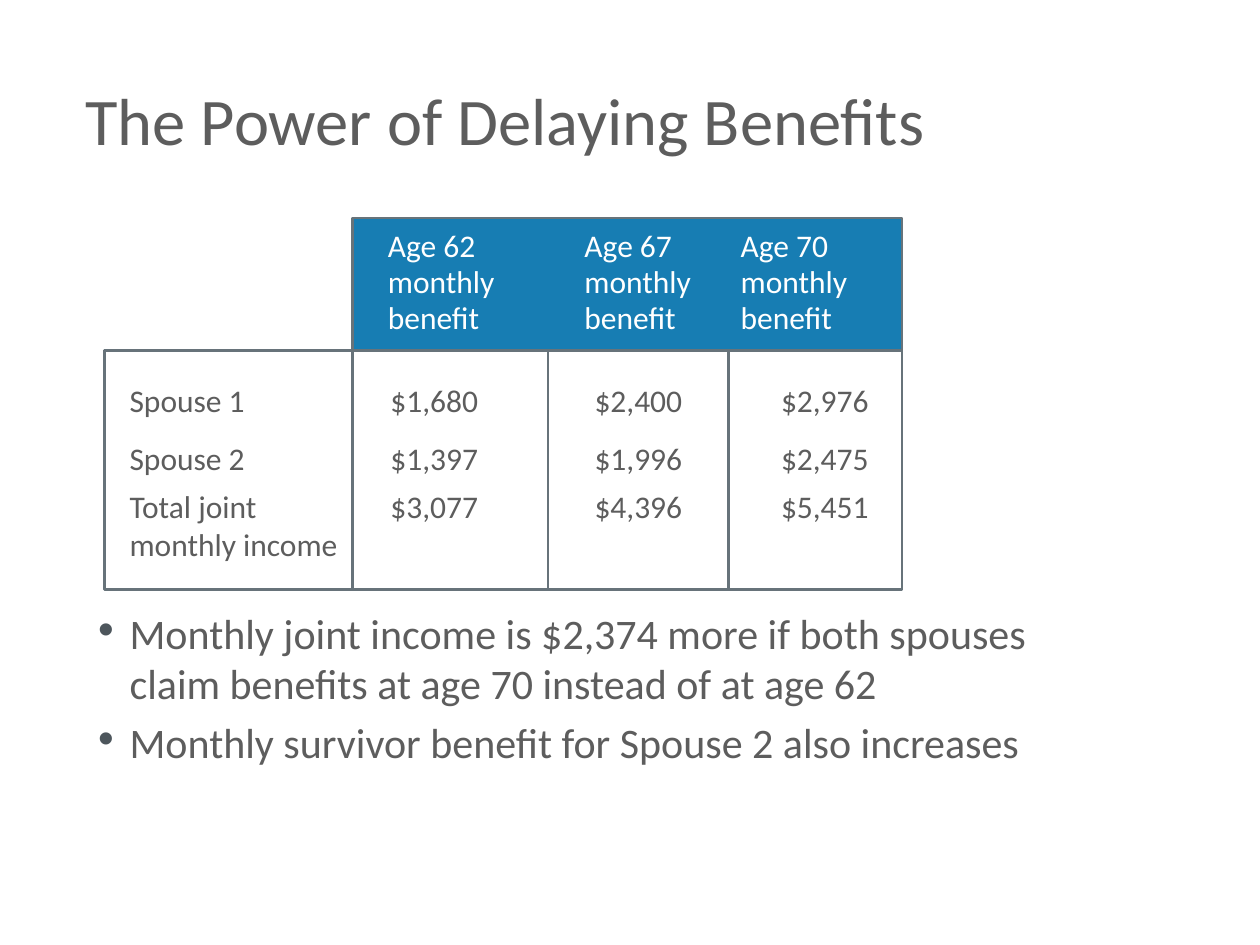
import pptx
import pptx.dml.color
import pptx.enum.shapes
import pptx.enum.text
import pptx.oxml.ns
import pptx.util
from lxml import etree
from pptx.util import Inches

RGBColor = pptx.dml.color.RGBColor
GREY = RGBColor(0x5D, 0x5D, 0x5D)
BULLET_GREY = RGBColor(0x4D, 0x56, 0x5C)
BORDER = RGBColor(0x67, 0x73, 0x7A)
BLUE = RGBColor(0x17, 0x7D, 0xB3)
WHITE = RGBColor(0xFF, 0xFF, 0xFF)

GRID_LEFT, GRID_RIGHT = 0.83, 7.16
HEADER_TOP, BODY_TOP, BODY_BOTTOM = 1.73, 2.78, 4.68
DIVIDERS = [2.8, 4.35, 5.78]
HEADERS = [
    ("Age 62", 2.98, 1.12),
    ("Age 67", 4.54, 1.12),
    ("Age 70", 5.78, 2.1),
]
VALUE_TABS = [2.07, 3.69, 5.17]
ROWS = [
    "Spouse 1\t$1,680\t$2,400\t$2,976",
    "Spouse 2\t$1,397\t$1,996\t$2,475",
    "Total joint\t$3,077\t$4,396\t$5,451\vmonthly income",
]
BULLETS = [
    "Monthly joint income is $2,374 more if both spouses claim benefits at age 70 instead of at age 62",
    "Monthly survivor benefit for Spouse 2 also increases",
]


def add_child(parent, tag, **attributes):
    return etree.SubElement(parent, pptx.oxml.ns.qn(tag), attributes)


def style_paragraph(para, size, color):
    para.font.name = "Calibri"
    para.font.size = pptx.util.Pt(size)
    para.font.color.rgb = color


def add_text_box(page, left, top, width, height):
    frame = page.shapes.add_textbox(*map(Inches, (left, top, width, height))).text_frame
    frame.word_wrap = True
    return frame


def add_paragraphs(frame, texts):
    for index, text in enumerate(texts):
        para = frame.add_paragraph() if index else frame.paragraphs[0]
        para.text = text
    return frame.paragraphs


def add_title(page, text):
    frame = add_text_box(page, 0.58, 0.58, 9.32, 0.72)
    frame.vertical_anchor = pptx.enum.text.MSO_ANCHOR.MIDDLE
    frame.text = text
    style_paragraph(frame.paragraphs[0], 38, GREY)


def add_bullets(page, texts):
    frame = add_text_box(page, 0.68, 4.77, 8.01, 1.75)
    for index, para in enumerate(add_paragraphs(frame, texts)):
        if index:
            para.space_before = pptx.util.Pt(4.8)
        properties = para._p.get_or_add_pPr()
        properties.set("marL", str(Inches(0.25)))
        properties.set("indent", str(Inches(-0.25)))
        color = add_child(properties, "a:buClr")
        add_child(color, "a:srgbClr", val=str(BULLET_GREY))
        add_child(properties, "a:buSzPct", val="50000")
        add_child(properties, "a:buFont", typeface="Wingdings", charset="2")
        add_child(properties, "a:buChar", char="l")
        style_paragraph(para, 24, GREY)


def style_line(line):
    line.color.rgb = BORDER
    line.width = pptx.util.Pt(1.5)


def add_frame(page, left, top, bottom, color=None):
    shape = page.shapes.add_shape(
        pptx.enum.shapes.MSO_SHAPE.RECTANGLE,
        Inches(left), Inches(top), Inches(GRID_RIGHT - left), Inches(bottom - top))
    shape.shadow.inherit = False
    if color is None:
        shape.fill.background()
    else:
        shape.fill.solid()
        shape.fill.fore_color.rgb = color
    style_line(shape.line)


def add_divider(page, x):
    connector = page.shapes.add_connector(
        pptx.enum.shapes.MSO_CONNECTOR.STRAIGHT,
        Inches(x), Inches(BODY_TOP), Inches(x), Inches(BODY_BOTTOM))
    style_line(connector.line)
    add_child(connector._element.spPr, "a:effectLst")


def add_header(page, age, left, width):
    frame = add_text_box(page, left, 1.77, width, 1.25)
    frame.text = f"{age}\vmonthly\vbenefit"
    para = frame.paragraphs[0]
    para.line_spacing = 0.95
    style_paragraph(para, 18, WHITE)


def add_benefit_rows(page):
    frame = add_text_box(page, 0.93, 2.9, 6.69, 1.64)
    paragraphs = add_paragraphs(frame, ROWS)
    for para in paragraphs:
        para.line_spacing = 1.25
        para.space_after = pptx.util.Pt(6)
        tabs = add_child(para._p.get_or_add_pPr(), "a:tabLst")
        for position in VALUE_TABS:
            add_child(tabs, "a:tab", pos=str(Inches(position)), algn="l")
        style_paragraph(para, 18, GREY)
    paragraphs[-1].line_spacing = pptx.util.Pt(21.6)
    paragraphs[-1].space_after = pptx.util.Pt(0)


def main():
    deck = pptx.Presentation()
    deck.slide_width = Inches(10)
    deck.slide_height = Inches(7.5)
    page = deck.slides.add_slide(deck.slide_layouts[6])
    add_title(page, "The Power of Delaying Benefits")
    add_bullets(page, BULLETS)
    add_frame(page, DIVIDERS[0], HEADER_TOP, BODY_TOP, BLUE)
    for age, left, width in HEADERS:
        add_header(page, age, left, width)
    add_benefit_rows(page)
    add_frame(page, GRID_LEFT, BODY_TOP, BODY_BOTTOM)
    for x in DIVIDERS:
        add_divider(page, x)
    deck.save("out.pptx")


if __name__ == "__main__":
    main()
